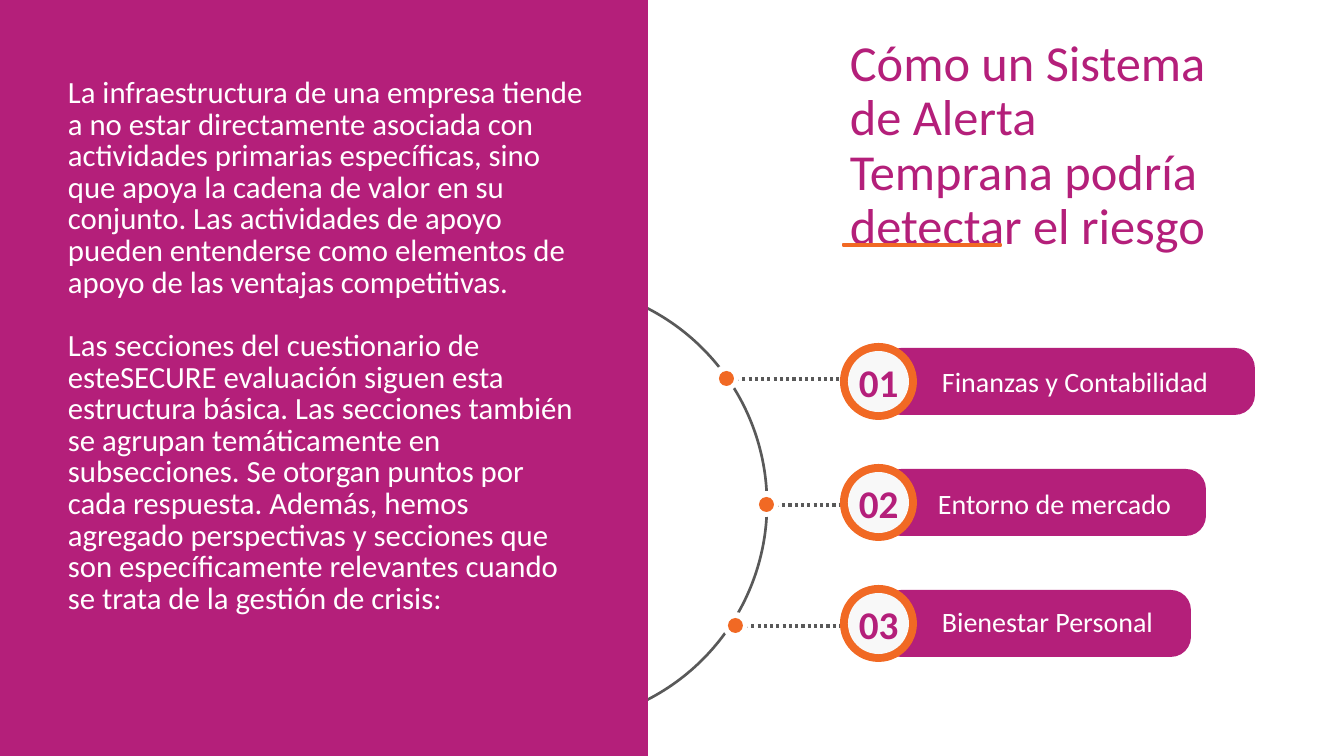
from dataclasses import dataclass
from typing import Optional

from lxml import etree
from pptx import Presentation
from pptx import util as u
from pptx.dml.color import RGBColor
from pptx.enum import dml, shapes, text
from pptx.oxml.ns import qn

EMU_PER_PX = 914400 / 100.8
FONT = "Calibri"
COLOURS = {
    "magenta": "B41F7A",
    "orange": "F16924",
    "grey": "595959",
    "pale": "F8F8F8",
    "white": "FFFFFF",
}
KIND = shapes.MSO_SHAPE

INFRASTRUCTURE = (
    "La infraestructura de una empresa tiende a no estar directamente asociada con "
    "actividades primarias específicas, sino que apoya la cadena de valor en su conjunto. "
    "Las actividades de apoyo pueden entenderse como elementos de apoyo de las ventajas "
    "competitivas."
)
QUESTIONNAIRE = (
    "Las secciones del cuestionario de esteSECURE evaluación siguen esta estructura básica. "
    "Las secciones también se agrupan temáticamente en subsecciones. Se otorgan puntos por "
    "cada respuesta. Además, hemos agregado perspectivas y secciones que son "
    "específicamente relevantes cuando se trata de la gestión de crisis:"
)
TITLE = "Cómo un Sistema de Alerta Temprana podría detectar el riesgo"


@dataclass(frozen=True)
class Box:
    left: int
    top: int
    width: int
    height: int

    def emu(self) -> tuple[int, int, int, int]:
        return px(self.left), px(self.top), px(self.width), px(self.height)


@dataclass(frozen=True)
class Section:
    label: str
    dot_x: int
    dot_y: int
    bar_width: int
    label_box: Box


SECTIONS = [
    Section("Finanzas y Contabilidad", 726, 378, 374, Box(932, 364, 431, 39)),
    Section("Entorno de mercado", 766, 504, 325, Box(928, 486, 325, 39)),
    Section("Bienestar Personal", 735, 625, 310, Box(932, 604, 310, 39)),
]
FIRST_BADGE_TOP, SECTION_PITCH = 343, 121
BADGE_LEFT, BADGE_SIZE, RING_WIDTH = 840, 77, 8
BAR_LEFT, BAR_HEIGHT = 881, 67
HALO_SIZE, DOT_SIZE = 26, 15


def px(length: int) -> int:
    return round(length * EMU_PER_PX)


def colour(name: str) -> RGBColor:
    return RGBColor.from_string(COLOURS[name])


def add_filled(slide, kind, box: Box, fill: str):
    """Add a preset shape with a plain fill and no outline."""
    shape = slide.shapes.add_shape(kind, *box.emu())
    shape.shadow.inherit = False
    shape.fill.solid()
    shape.fill.fore_color.rgb = colour(fill)
    shape.line.fill.background()
    return shape


def add_disc(slide, centre_x: int, centre_y: int, size: int, fill: str) -> None:
    corner = Box(centre_x - size // 2, centre_y - size // 2, size, size)
    add_filled(slide, KIND.OVAL, corner, fill)


def add_text(slide, box: Box, paragraphs: list[str], size: int, ink: str,
             spacing: Optional[float] = None, gap: float = 0,
             bold: bool = False, middle: bool = False) -> None:
    """Add a wrapped text box; gap is the space in points between paragraphs."""
    frame = slide.shapes.add_textbox(*box.emu()).text_frame
    frame.word_wrap = True
    if middle:
        frame.vertical_anchor = text.MSO_ANCHOR.MIDDLE
    frame.text = "\n".join(paragraphs)
    for index, paragraph in enumerate(frame.paragraphs):
        paragraph.line_spacing = spacing
        if index:
            paragraph.space_before = u.Pt(gap)
        paragraph.font.name = FONT
        paragraph.font.size = u.Pt(size)
        paragraph.font.bold = bold
        paragraph.font.color.rgb = colour(ink)


def add_arc(slide) -> None:
    """Add the right half of the circle that carries the dots."""
    arc = slide.shapes.add_shape(KIND.ARC, *Box(327, 284, 440, 440).emu())
    arc.adjustments[1] = 54  # 90 degrees, in units of 100000/60000 degree
    arc.shadow.inherit = False
    arc.fill.background()
    arc.line.color.rgb = colour("grey")
    arc.line.width = u.Pt(1.91)


def add_dotted_line(slide, start_x: int, end_x: int, y: int) -> None:
    connector = slide.shapes.add_connector(
        shapes.MSO_CONNECTOR.STRAIGHT, px(start_x), px(y), px(end_x), px(y))
    connector.line.color.rgb = colour("grey")
    connector.line.width = u.Pt(2.25)
    connector.line.dash_style = dml.MSO_LINE.ROUND_DOT
    properties = connector.element.find(qn("p:spPr"))
    etree.SubElement(properties, qn("a:effectLst"))


def add_section(slide, number: int, section: Section) -> None:
    top = FIRST_BADGE_TOP + (number - 1) * SECTION_PITCH
    add_dotted_line(slide, section.dot_x + 10, 908, section.dot_y + 1)
    add_disc(slide, section.dot_x, section.dot_y, HALO_SIZE, "white")
    add_disc(slide, section.dot_x, section.dot_y, DOT_SIZE, "orange")

    bar_box = Box(BAR_LEFT, top + 5, section.bar_width, BAR_HEIGHT)
    bar = add_filled(slide, KIND.ROUNDED_RECTANGLE, bar_box, "magenta")
    bar.adjustments[0] = 0.3
    add_text(slide, section.label_box, [section.label], 20, "white",
             spacing=u.Pt(20.4), middle=True)

    for inset, fill in ((0, "orange"), (RING_WIDTH, "pale")):
        size = BADGE_SIZE - 2 * inset
        ring = Box(BADGE_LEFT + inset, top + inset, size, size)
        add_filled(slide, KIND.OVAL, ring, fill)
    add_text(slide, Box(849, top + 10, 61, 57), [f"{number:02}"], 28, "magenta", bold=True)


def main() -> None:
    presentation = Presentation()
    presentation.slide_width, presentation.slide_height = px(1344), px(756)
    slide = presentation.slides.add_slide(presentation.slide_layouts[6])

    add_arc(slide)
    add_filled(slide, KIND.RECTANGLE, Box(0, 0, 648, 756), "magenta")
    add_text(slide, Box(58, 73, 541, 704), [INFRASTRUCTURE, QUESTIONNAIRE], 22, "white",
             spacing=u.Pt(22.6), gap=22.6)
    for number, section in enumerate(SECTIONS, start=1):
        add_section(slide, number, section)

    add_text(slide, Box(840, 33, 382, 271), [TITLE], 36, "magenta", spacing=0.9)
    underline = add_filled(slide, KIND.RECTANGLE, Box(843, 244, 158, 2), "orange")
    underline.line.color.rgb = colour("orange")
    underline.line.width = u.Pt(1)

    presentation.save("out.pptx")


if __name__ == "__main__":
    main()
